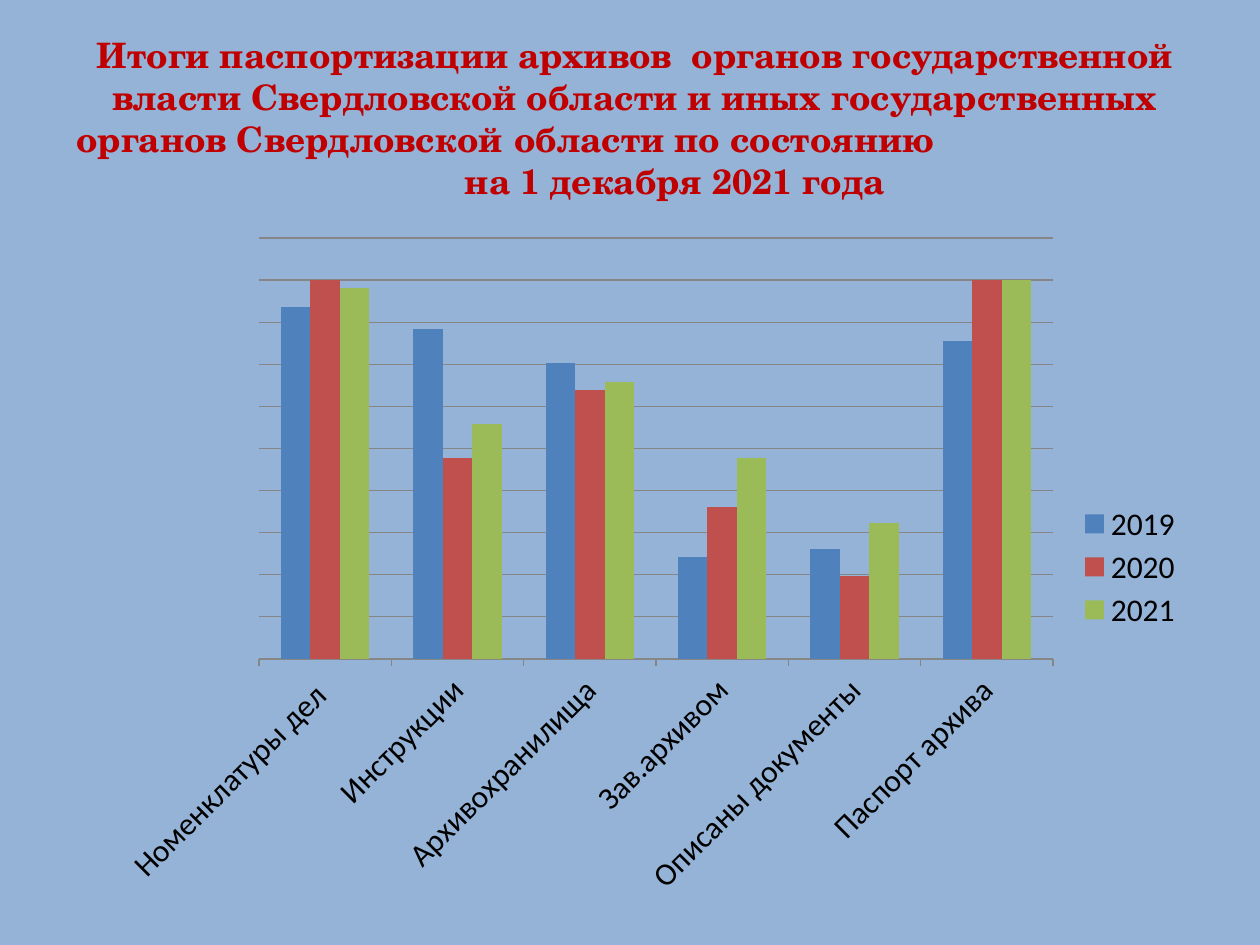
import pptx
import pptx.chart.data
import pptx.dml.color
import pptx.enum.chart
import pptx.enum.text
import pptx.oxml
import pptx.oxml.ns
import pptx.util

RGB = pptx.dml.color.RGBColor
SKY = RGB(0x95, 0xB3, 0xD7)
RED = RGB(0xC0, 0x00, 0x00)
BLACK = RGB(0x00, 0x00, 0x00)
GRAY = RGB(0x86, 0x86, 0x86)
BLUE = RGB(0x4F, 0x81, 0xBD)
BRICK = RGB(0xC0, 0x50, 0x4D)
GREEN = RGB(0x9B, 0xBB, 0x59)

ALIGN = pptx.enum.text.PP_ALIGN
TITLE = [  # text, alignment, left indent in px
    ("Итоги паспортизации архивов  органов государственной власти "
     "Свердловской области и иных государственных", ALIGN.CENTER, 0),
    ("органов Свердловской\u00a0области по состоянию", ALIGN.LEFT, 0),
    ("на 1 декабря 2021 года", ALIGN.CENTER, 80),
]
CATS = ["Номенклатуры дел ", "Инструкции", "Архивохранилища",
        "Зав.архивом", "Описаны документы", "Паспорт архива"]
YEARS = [
    ("2019", BLUE, (93, 87, 78, 27, 29, 84)),
    ("2020", BRICK, (100, 53, 71, 40, 22, 100)),
    ("2021", GREEN, (98, 62, 73, 53, 36, 100)),
]


def px(n):
    return pptx.util.Emu(round(n * 914400 / 126))


def apply(obj, values):
    for key, val in values.items():
        setattr(obj, key, val)


class Deck:
    title = {"name": "TeX Gyre Schola", "size": pptx.util.Pt(20), "bold": True}
    label = {"name": "Calibri", "size": pptx.util.Pt(18)}

    def __init__(self, wide, high):
        self.prs = pptx.Presentation()
        apply(self.prs, {"slide_width": px(wide), "slide_height": px(high)})
        self.slide = self.prs.slides.add_slide(self.prs.slide_layouts[6])
        fill = self.slide.background.fill
        fill.solid()
        fill.fore_color.rgb = SKY

    def text(self, box, lines, color):
        frame = self.slide.shapes.add_textbox(*map(px, box)).text_frame
        apply(frame, {"word_wrap": True,
                      "vertical_anchor": pptx.enum.text.MSO_ANCHOR.MIDDLE})
        for i, (words, align, left) in enumerate(lines):
            para = frame.add_paragraph() if i else frame.paragraphs[0]
            para.alignment = align
            para._p.get_or_add_pPr().set("marL", str(px(left)))
            run = para.add_run()
            run.text = words
            apply(run.font, self.title)
            run.font.color.rgb = color

    def place(self, part, box, frame, inner=False):
        """Fix a chart part at a px box on the slide."""
        x, y, w, h = frame
        vals = {"x": (box[0] - x) / w, "y": (box[1] - y) / h,
                "w": box[2] / w, "h": box[3] / h}
        target = '<c:layoutTarget val="inner"/>' if inner else ""
        modes = "".join(f'<c:{k}Mode val="edge"/>' for k in "xy")
        sizes = "".join(f'<c:{k} val="{v:.4f}"/>' for k, v in vals.items())
        node = pptx.oxml.parse_xml(
            f'<c:layout {pptx.oxml.ns.nsdecls("c")}><c:manualLayout>'
            f'{target}{modes}{sizes}</c:manualLayout></c:layout>')
        for old in part.findall(pptx.oxml.ns.qn("c:layout")):
            part.remove(old)
        part.insert(0 if inner else 1, node)

    def bars(self, box, plot, key, cats, rows):
        enum = pptx.enum.chart
        data = pptx.chart.data.CategoryChartData()
        data.categories = cats
        for name, _, vals in rows:
            data.add_series(name, vals)
        chart = self.slide.shapes.add_chart(
            enum.XL_CHART_TYPE.COLUMN_CLUSTERED, *map(px, box), data).chart
        apply(chart, {"has_title": False, "has_legend": True})
        apply(chart.font, self.label)
        chart.font.color.rgb = BLACK

        # Columns
        apply(chart.plots[0], {"gap_width": 150, "overlap": 0,
                               "vary_by_categories": False})
        for series, (_, color, _) in zip(chart.plots[0].series, rows):
            series.format.fill.solid()
            series.format.fill.fore_color.rgb = color

        # Axes: ten equal steps, the ninth at 100
        axis = chart.value_axis
        apply(axis, {"minimum_scale": 0, "maximum_scale": 111.1,
                     "major_unit": 11.11, "has_major_gridlines": True,
                     "visible": False})
        base = chart.category_axis
        base.major_tick_mark = enum.XL_TICK_MARK.OUTSIDE
        apply(base.tick_labels.font, self.label)
        body = base._element.find(pptx.oxml.ns.qn("c:txPr")).bodyPr
        body.set("rot", "-2700000")
        for line in (axis.major_gridlines.format.line, base.format.line):
            line.color.rgb = GRAY
            line.width = pptx.util.Pt(0.75)

        # Legend and plot area
        apply(chart.legend, {"position": enum.XL_LEGEND_POSITION.RIGHT,
                             "include_in_layout": False})
        area = chart._chartSpace.chart.plotArea
        self.place(area, plot, box, inner=True)
        self.place(chart.legend._element, key, box)


def main():
    deck = Deck(1260, 945)
    # Heading
    deck.text((64, 26, 1142, 183), TITLE, RED)
    # Results by year
    deck.bars((105, 224, 1091, 684), (259, 238, 794, 421),
              (1075, 500, 110, 134), CATS, YEARS)
    deck.prs.save("out.pptx")


if __name__ == "__main__":
    main()
